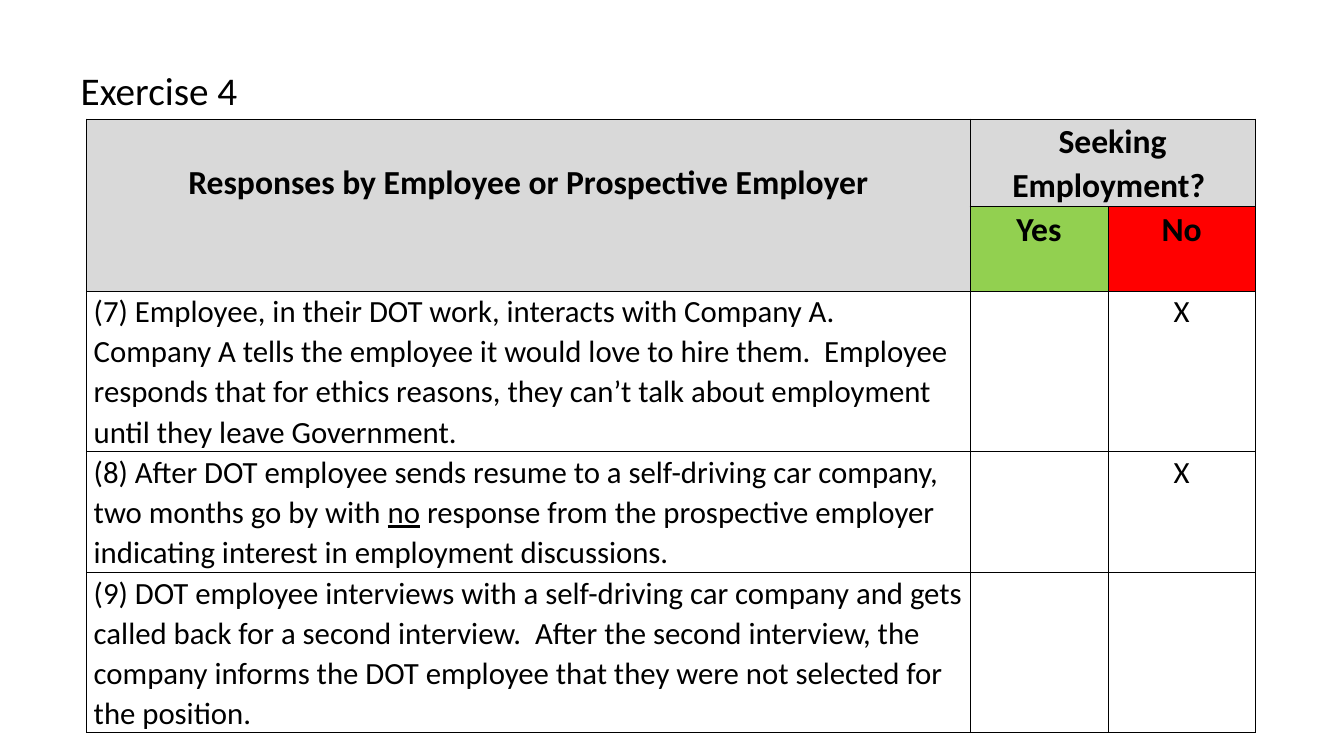
from dataclasses import dataclass

from lxml.etree import SubElement
from pptx import Presentation
from pptx.dml.color import RGBColor
from pptx.enum.text import MSO_ANCHOR, MSO_AUTO_SIZE, PP_ALIGN
from pptx.oxml.ns import qn
from pptx.table import Table, _Cell
from pptx.util import Emu, Pt

PX = 9144  # 100 px to the inch
COLORS = {"ink": "000000", "header": "D9D9D9", "yes": "92D050", "no": "FF0000"}
COLUMNS = (876, 137, 146)
ROWS = (87, 82, 159, 120, 159)
HEADER = {"size": Pt(24), "bold": True}
BODY = {"size": Pt(22), "bold": False}


@dataclass(frozen=True)
class Entry:
    """Text of one cell; words between underscores are underlined."""
    row: int
    col: int
    text: str
    fill: str = ""
    align: PP_ALIGN = PP_ALIGN.CENTER
    top: int = 0
    rows: int = 1
    cols: int = 1


HEADINGS = (
    Entry(0, 0, "Responses by Employee or Prospective Employer", "header", top=40, rows=2),
    Entry(0, 1, "Seeking Employment? ", "header", cols=2),
    Entry(1, 1, "Yes", "yes"),
    Entry(1, 2, "No", "no"),
)
RESPONSES = (
    ("(7) Employee, in their DOT work, interacts with Company A.  Company A tells the "
     "employee it would love to hire them.  Employee responds that for ethics reasons, "
     "they can’t talk about employment until they leave Government.", "X"),
    ("(8) After DOT employee sends resume to a self-driving car company, two months go by "
     "with _no_ response from the prospective employer indicating interest in employment "
     "discussions.", "X"),
    ("(9) DOT employee interviews with a self-driving car company and gets called back for "
     "a second interview.  After the second interview, the company informs the DOT employee "
     "that they were not selected for the position.", ""),
)


def px(n: int) -> Emu:
    return Emu(n * PX)


def rgb(name: str) -> RGBColor:
    return RGBColor.from_string(COLORS[name])


def apply(target: object, values: dict) -> None:
    """Set each attribute named in values."""
    for name, value in values.items():
        setattr(target, name, value)


def add_run(p, text: str, values: dict) -> None:
    r = p.add_run()
    r.text = text
    apply(r.font, {"name": "Calibri", **values})
    r.font.color.rgb = rgb("ink")


def add_borders(cell: _Cell) -> None:
    tc_pr = cell._tc.get_or_add_tcPr()
    for i, side in enumerate(("lnL", "lnR", "lnT", "lnB")):
        ln = SubElement(tc_pr, qn(f"a:{side}"), w=str(Pt(0.5)))
        fill = SubElement(ln, qn("a:solidFill"))
        SubElement(fill, qn("a:srgbClr"), val=COLORS["ink"])
        tc_pr.insert(i, ln)


def fill_cell(table: Table, entry: Entry, font: dict) -> None:
    cell = table.cell(entry.row, entry.col)
    if entry.rows * entry.cols > 1:
        cell.merge(table.cell(entry.row + entry.rows - 1, entry.col + entry.cols - 1))
    cell.margin_top = px(entry.top)
    if entry.fill:
        cell.fill.solid()
        cell.fill.fore_color.rgb = rgb(entry.fill)
    p = cell.text_frame.paragraphs[0]
    apply(p, {"alignment": entry.align, "line_spacing": 1.07})
    for i, part in enumerate(entry.text.split("_")):
        if part:
            add_run(p, part, {**font, "underline": i % 2 == 1})


def add_responses(slide) -> None:
    frame = slide.shapes.add_table(len(ROWS), len(COLUMNS), px(86), px(118),
                                   px(sum(COLUMNS)), px(sum(ROWS)))
    table = frame.table
    apply(table, {"first_row": False, "horz_banding": False})
    for column, width in zip(table.columns, COLUMNS):
        column.width = px(width)
    for row, height in zip(table.rows, ROWS):
        row.height = px(height)
    for cell in table.iter_cells():
        apply(cell, {"margin_left": px(7), "margin_right": px(7),
                     "margin_top": 0, "margin_bottom": 0,
                     "vertical_anchor": MSO_ANCHOR.TOP})
        cell.fill.background()
        add_borders(cell)
    for entry in HEADINGS:
        fill_cell(table, entry, HEADER)
    for row, (response, no_mark) in enumerate(RESPONSES, start=2):
        fill_cell(table, Entry(row, 0, response, align=PP_ALIGN.LEFT), BODY)
        fill_cell(table, Entry(row, 2, no_mark), BODY)


def add_title(slide, text: str) -> None:
    sp = slide.shapes.title
    apply(sp, {"left": px(70), "top": px(61), "width": px(596), "height": px(57)})
    tf = sp.text_frame
    apply(tf, {"word_wrap": True, "auto_size": MSO_AUTO_SIZE.NONE,
               "vertical_anchor": MSO_ANCHOR.TOP})
    p = tf.paragraphs[0]
    p.alignment = PP_ALIGN.LEFT
    add_run(p, text, {"size": Pt(28)})


def main() -> None:
    prs = Presentation()
    apply(prs, {"slide_width": px(1333), "slide_height": px(750)})
    slide = prs.slides.add_slide(prs.slide_layouts[5])
    add_title(slide, "Exercise 4")
    add_responses(slide)
    prs.save("out.pptx")


if __name__ == "__main__":
    main()
